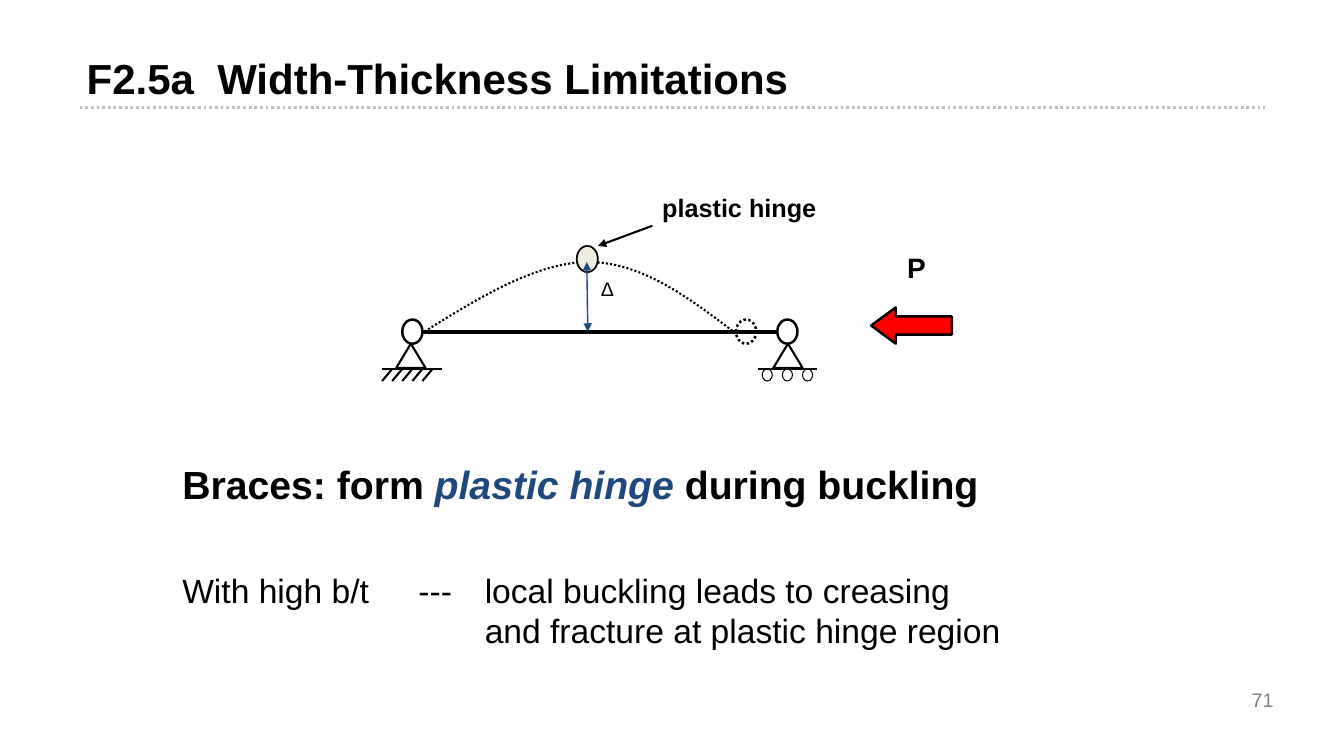
"""Build the slide on width-thickness limitations of braces."""
from lxml.etree import SubElement
from pptx import Presentation
from pptx.dml.color import RGBColor
from pptx.enum.dml import MSO_LINE
from pptx.enum.shapes import MSO_CONNECTOR, MSO_SHAPE as SHAPE
from pptx.enum.text import MSO_ANCHOR as ANCHOR, PP_ALIGN as ALIGN
from pptx.oxml.ns import qn
from pptx.util import Pt

PX = 9144
COLORS = {
    "black": "000000", "blue": "1F497D", "red": "FF0000",
    "cream": "EEECE1", "rule": "BFBFBF", "number": "7F7F7F",
}


def style_line(shape, color, width, dotted=False):
    shape.line.color.rgb = RGBColor.from_string(COLORS[color])
    shape.line.width = Pt(width)
    if dotted:
        shape.line.dash_style = MSO_LINE.ROUND_DOT


def style_font(run, size, color="black", bold=False, italic=False):
    run.font.name = "Arial"
    run.font.size = Pt(size)
    run.font.bold = bold
    run.font.italic = italic
    run.font.color.rgb = RGBColor.from_string(COLORS[color])


presentation = Presentation()
presentation.slide_width = 1333 * PX
presentation.slide_height = 750 * PX
slide = presentation.slides.add_slide(presentation.slide_layouts[5])
shapes = slide.shapes

title = shapes.title
title.left, title.top, title.width, title.height = [v * PX for v in (76, 47, 1197, 68)]
title.text_frame.text = "F2.5a  Width-Thickness Limitations"
title.text_frame.vertical_anchor = ANCHOR.TOP
title.text_frame.paragraphs[0].alignment = ALIGN.LEFT
style_font(title.text_frame.paragraphs[0].runs[0], 30, bold=True)

# x1, y1, x2, y2, color, width, dotted, arrowheads
lines = [
    (79, 107, 1255, 107, "rule", 2, True, []),
    (418, 329, 771, 329, "black", 3, False, []),
    (379, 366, 438, 366, "black", 1.5, False, []),
    (752, 366, 810, 366, "black", 1.5, False, []),
    (647, 224, 593, 244, "black", 1.5, False, ["tailEnd"]),
]
for hatch in range(5):
    x = 389 + 10 * hatch
    lines.append((x, 366, x - 10, 378, "black", 1.5, False, []))

outlines = [
    (SHAPE.ISOSCELES_TRIANGLE, 393, 341, 29, 24, 1.5, None, False),
    (SHAPE.ISOSCELES_TRIANGLE, 767, 341, 29, 24, 1.5, None, False),
    (SHAPE.OVAL, 399, 317, 20, 24, 1.75, None, False),
    (SHAPE.OVAL, 771, 317, 20, 24, 1.75, None, False),
    (SHAPE.OVAL, 730, 317, 20, 24, 1.75, None, True),
    (SHAPE.LEFT_ARROW, 864, 305, 80, 36, 1.75, "red", False),
    (SHAPE.OVAL, 572, 244, 21, 26, 1.25, "cream", False),
]
for roller in range(3):
    outlines.append((SHAPE.OVAL, 756 + 20 * roller, 366, 10, 12, 0.75, None, False))

curve_points = []
for p0, p1, p2, p3 in (
    ((421, 329), (477, 294), (533, 260), (584, 260)),
    ((584, 260), (636, 260), (683, 295), (730, 331)),
):
    for step in range(25):
        t = step / 24
        weights = ((1 - t) ** 3, 3 * t * (1 - t) ** 2, 3 * t * t * (1 - t), t ** 3)
        curve_points.append(tuple(
            round(PX * sum(w * p[axis] for w, p in zip(weights, (p0, p1, p2, p3))))
            for axis in (0, 1)
        ))
builder = shapes.build_freeform(*curve_points[0], scale=1.0)
builder.add_line_segments(curve_points[1:], close=False)
buckled_brace = builder.convert_to_shape()
buckled_brace.shadow.inherit = False
buckled_brace.fill.background()
style_line(buckled_brace, "black", 1.5, True)

for kind, left, top, width, height, weight, fill, dotted in outlines:
    shape = shapes.add_shape(kind, left * PX, top * PX, width * PX, height * PX)
    shape.shadow.inherit = False
    if fill:
        shape.fill.solid()
        shape.fill.fore_color.rgb = RGBColor.from_string(COLORS[fill])
    else:
        shape.fill.background()
    style_line(shape, "black", weight, dotted)
    if kind == SHAPE.LEFT_ARROW:
        shape.adjustments[1] = 0.68

lines.append((582, 260, 583, 329, "blue", 1, False, ["headEnd", "tailEnd"]))
for x1, y1, x2, y2, color, weight, dotted, ends in lines:
    line = shapes.add_connector(
        MSO_CONNECTOR.STRAIGHT, x1 * PX, y1 * PX, x2 * PX, y2 * PX)
    style_line(line, color, weight, dotted)
    for end in ends:
        SubElement(line.line._get_or_add_ln(), qn(f"a:{end}"), type="triangle")
    SubElement(line._element.spPr, qn("a:effectLst"))

consequence = ("With high b/t\t ---\tlocal buckling leads to creasing\v"
               "\t\tand fracture at plastic hinge region")
texts = [
    (962, 674, 311, 40, ALIGN.RIGHT, 14, "number", False, ["71"]),
    (171, 452, 834, 57, ALIGN.LEFT, 28, "black", True,
     ["Braces: form ", "plastic hinge ", "during buckling"]),
    (864, 244, 90, 43, ALIGN.CENTER, 20, "black", True, ["P"]),
    (647, 186, 174, 40, ALIGN.LEFT, 18, "black", True, ["plastic hinge"]),
    (561, 270, 83, 33, ALIGN.CENTER, 14, "black", False, ["Δ"]),
    (171, 560, 937, 91, ALIGN.LEFT, 24, "black", False, [consequence]),
]
for left, top, width, height, align, size, color, bold, parts in texts:
    box = shapes.add_textbox(left * PX, top * PX, width * PX, height * PX)
    frame = box.text_frame
    frame.word_wrap = True
    if color == "number":
        frame.vertical_anchor = ANCHOR.MIDDLE
    paragraph = frame.paragraphs[0]
    paragraph.alignment = align
    if parts == [consequence]:
        tabs = SubElement(paragraph._p.get_or_add_pPr(), qn("a:tabLst"))
        for stop in (225, 300):
            SubElement(tabs, qn("a:tab"), pos=str(stop * PX), algn="l")
        paragraph.text = consequence
    else:
        for part in parts:
            paragraph.add_run().text = part
    for run in paragraph.runs:
        emphasis = len(parts) > 1 and run.text == parts[1]
        style_font(run, size, "blue" if emphasis else color, bold, emphasis)

presentation.save("out.pptx")
